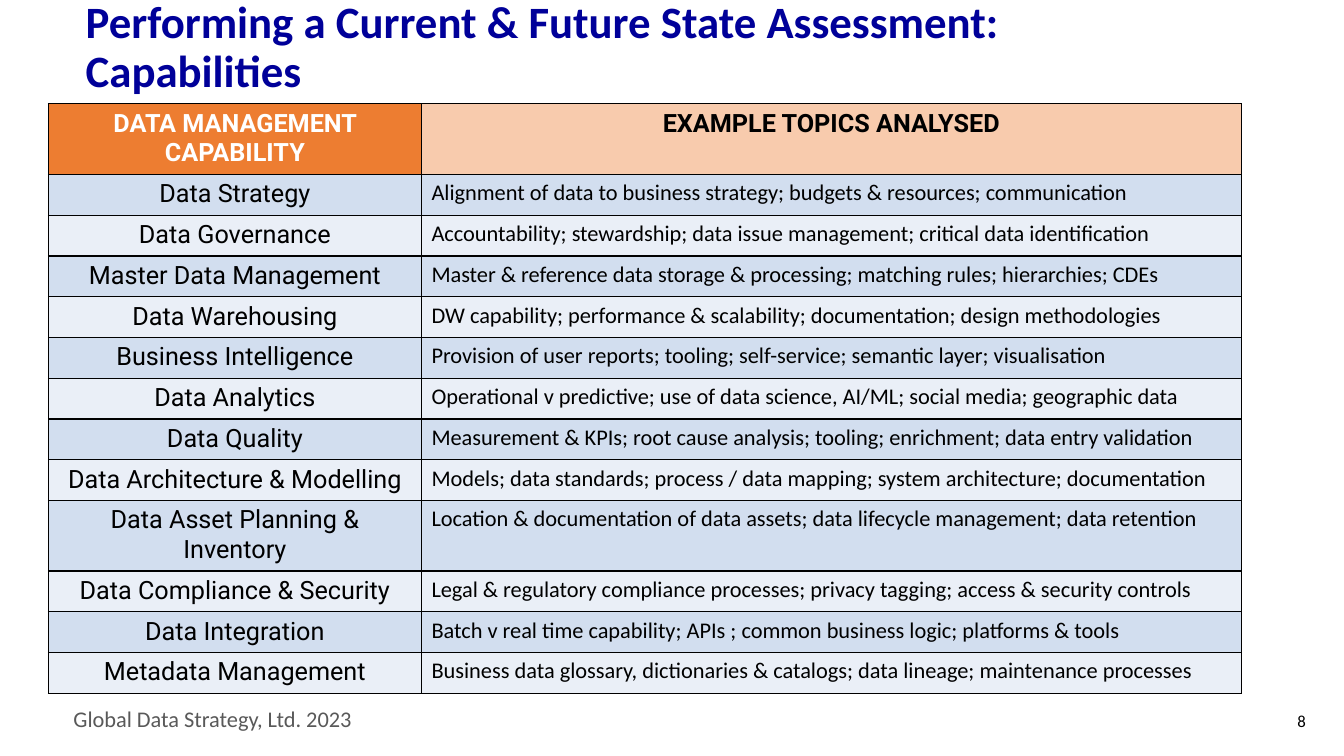
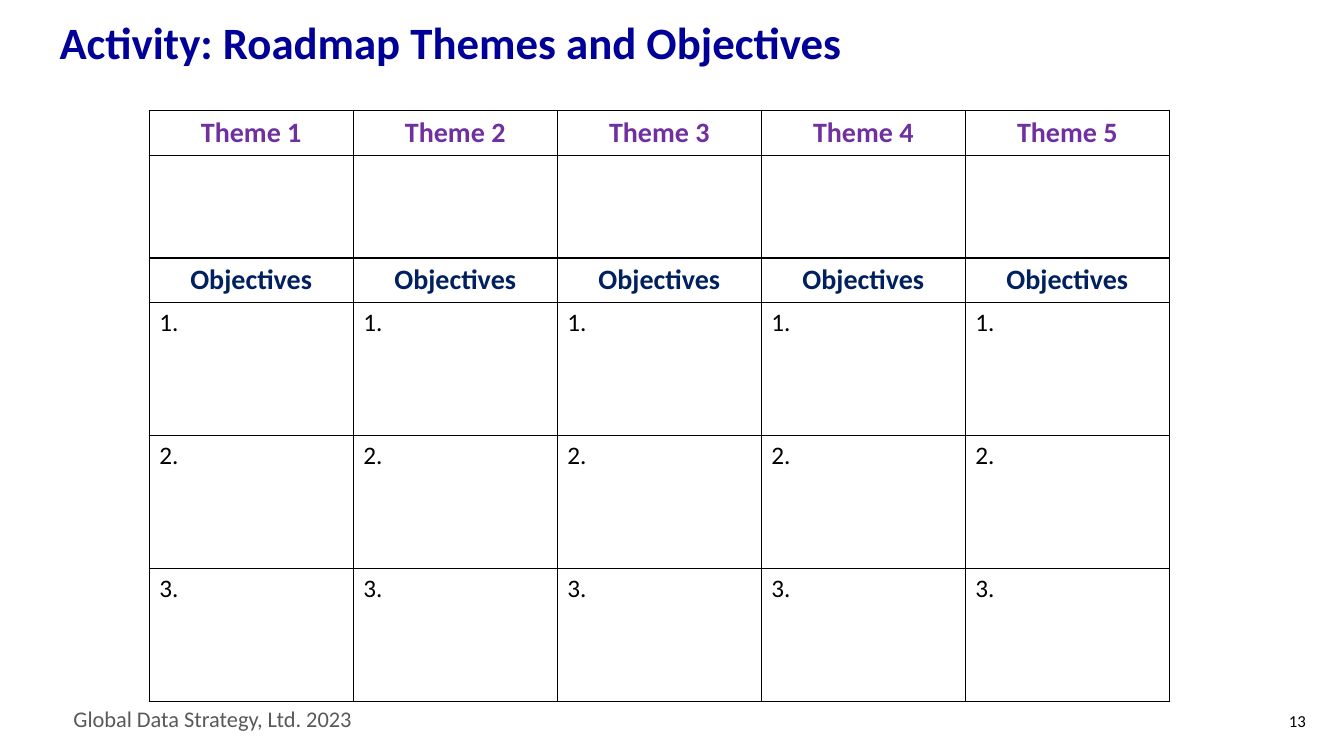
from lxml.etree import SubElement
from pptx import Presentation
from pptx.dml.color import RGBColor
from pptx.enum.text import MSO_ANCHOR, MSO_AUTO_SIZE, PP_ALIGN
from pptx.oxml.ns import qn
from pptx.util import Inches, Pt

COLORS = {
    "title": "000099", "footer": "595959", "black": "000000", "white": "FFFFFF",
    "orange": "ED7D31", "peach": "F8CBAD", "band_dark": "D2DEEF",
    "band_light": "EAEFF7", "theme": "7030A0", "objective": "002060",
}
FOOTER = "Global Data Strategy, Ltd. 2023"

CAPABILITY_HEADERS = ("DATA MANAGEMENT CAPABILITY", "EXAMPLE TOPICS ANALYSED")
CAPABILITIES = [
    ("Data Strategy", "Alignment of data to business strategy; budgets & resources; communication"),
    ("Data Governance", "Accountability; stewardship; data issue management; critical data identification"),
    ("Master Data Management", "Master & reference data storage & processing; matching rules; hierarchies; CDEs"),
    ("Data Warehousing", "DW capability; performance & scalability; documentation; design methodologies"),
    ("Business Intelligence", "Provision of user reports; tooling; self-service; semantic layer; visualisation"),
    ("Data Analytics", "Operational v predictive; use of data science, AI/ML; social media; geographic data"),
    ("Data Quality", "Measurement & KPIs; root cause analysis; tooling; enrichment; data entry validation"),
    ("Data Architecture & Modelling", "Models; data standards; process / data mapping; system architecture; documentation"),
    ("Data Asset Planning & Inventory", "Location & documentation of data assets; data lifecycle management; data retention"),
    ("Data Compliance & Security", "Legal & regulatory compliance processes; privacy tagging; access & security controls"),
    ("Data Integration", "Batch v real time capability; APIs ; common business logic; platforms & tools"),
    ("Metadata Management", "Business data glossary, dictionaries & catalogs; data lineage; maintenance processes"),
]
TWO_LINE_CAPABILITY = "Data Asset Planning & Inventory"

THEME_COUNT = 5
OBJECTIVE_COUNT = 3


def style(paragraph, size, color, font="Calibri", bold=False, align=PP_ALIGN.LEFT):
    paragraph.alignment = align
    paragraph.font.name = font
    paragraph.font.size = Pt(size)
    paragraph.font.bold = bold
    paragraph.font.color.rgb = RGBColor.from_string(COLORS[color])


def add_label(page, text, left, top, width, height, **look):
    box = page.shapes.add_textbox(Inches(left), Inches(top), Inches(width), Inches(height))
    frame = box.text_frame
    frame.word_wrap = True
    frame.text = text
    style(frame.paragraphs[0], **look)
    return frame


def add_page(deck, title, left, top, width, number):
    """Add a slide with the shared title style, footer and page number."""
    page = deck.slides.add_slide(deck.slide_layouts[5])
    heading = page.shapes.title
    heading.left, heading.top = Inches(left), Inches(top)
    heading.width, heading.height = Inches(width), Inches(0.68)
    frame = heading.text_frame
    frame.text = title
    frame.word_wrap = True
    frame.auto_size = MSO_AUTO_SIZE.NONE
    frame.vertical_anchor = MSO_ANCHOR.MIDDLE
    frame.paragraphs[0].line_spacing = 0.9
    style(frame.paragraphs[0], 32, "title", bold=True)

    add_label(page, FOOTER, 0.63, 6.95, 3.62, 0.37, size=16, color="footer")
    number_frame = add_label(page, str(number), 12.42, 6.95, 0.63, 0.4,
                             size=12, color="black", align=PP_ALIGN.RIGHT)
    number_frame.vertical_anchor = MSO_ANCHOR.MIDDLE
    return page


def add_grid(page, left, top, widths, heights):
    """Add an unstyled table with the given column widths and row heights."""
    frame = page.shapes.add_table(len(heights), len(widths), Inches(left), Inches(top),
                                  Inches(sum(widths)), Inches(sum(heights)))
    table = frame.table
    table.first_row = table.horz_banding = False
    for column, width in zip(table.columns, widths):
        column.width = Inches(width)
    for row, height in zip(table.rows, heights):
        row.height = Inches(height)
    return table


def fill_cell(cell, text, fill=None, **look):
    if fill:
        cell.fill.solid()
        cell.fill.fore_color.rgb = RGBColor.from_string(COLORS[fill])
    else:
        cell.fill.background()
    properties = cell._tc.get_or_add_tcPr()
    for position, side in enumerate(("a:lnL", "a:lnR", "a:lnT", "a:lnB")):
        line = SubElement(properties, qn(side), w=str(Pt(1)))
        solid = SubElement(line, qn("a:solidFill"))
        SubElement(solid, qn("a:srgbClr"), val=COLORS["black"])
        properties.insert(position, line)
    cell.text = text
    style(cell.text_frame.paragraphs[0], **look)


def build_capabilities(deck):
    page = add_page(deck, "Performing a Current & Future State Assessment: Capabilities",
                    0.75, 0.14, 11, 8)
    tall = 0.69
    short = (5.83 - 2 * tall) / (len(CAPABILITIES) - 1)
    heights = [tall] + [tall if name == TWO_LINE_CAPABILITY else short
                        for name, _ in CAPABILITIES]
    table = add_grid(page, 0.48, 1.03, (3.7, 8.13), heights)

    header_colors = (("orange", "white"), ("peach", "black"))
    for column, (text, (fill, color)) in enumerate(zip(CAPABILITY_HEADERS, header_colors)):
        fill_cell(table.cell(0, column), text, fill, size=18, color=color,
                  font="Roboto", bold=True, align=PP_ALIGN.CENTER)
    for row, (name, topics) in enumerate(CAPABILITIES, start=1):
        band = "band_dark" if row % 2 else "band_light"
        fill_cell(table.cell(row, 0), name, band, size=18, color="black",
                  font="Roboto", align=PP_ALIGN.CENTER)
        fill_cell(table.cell(row, 1), topics, band, size=16, color="black")


def build_roadmap(deck):
    page = add_page(deck, "Activity: Roadmap Themes and Objectives", 0.49, 0.11, 11.5, 13)
    heights = [0.44, 1.02, 0.44] + [1.32] * OBJECTIVE_COUNT
    table = add_grid(page, 1.48, 1.1, [10.12 / THEME_COUNT] * THEME_COUNT, heights)

    header = {"size": 20, "bold": True, "align": PP_ALIGN.CENTER}
    body = {"size": 18, "color": "black"}
    for column in range(THEME_COUNT):
        theme_cell = table.cell(0, column)
        fill_cell(theme_cell, f"Theme {column + 1}", color="theme", **header)
        theme_cell.vertical_anchor = MSO_ANCHOR.MIDDLE
        fill_cell(table.cell(1, column), "", **body)
        fill_cell(table.cell(2, column), "Objectives", color="objective", **header)
        for number in range(1, OBJECTIVE_COUNT + 1):
            fill_cell(table.cell(2 + number, column), f"{number}.", **body)


def main():
    deck = Presentation()
    deck.slide_width, deck.slide_height = Inches(13.33), Inches(7.5)
    build_capabilities(deck)
    build_roadmap(deck)
    deck.save("out.pptx")


if __name__ == "__main__":
    main()
